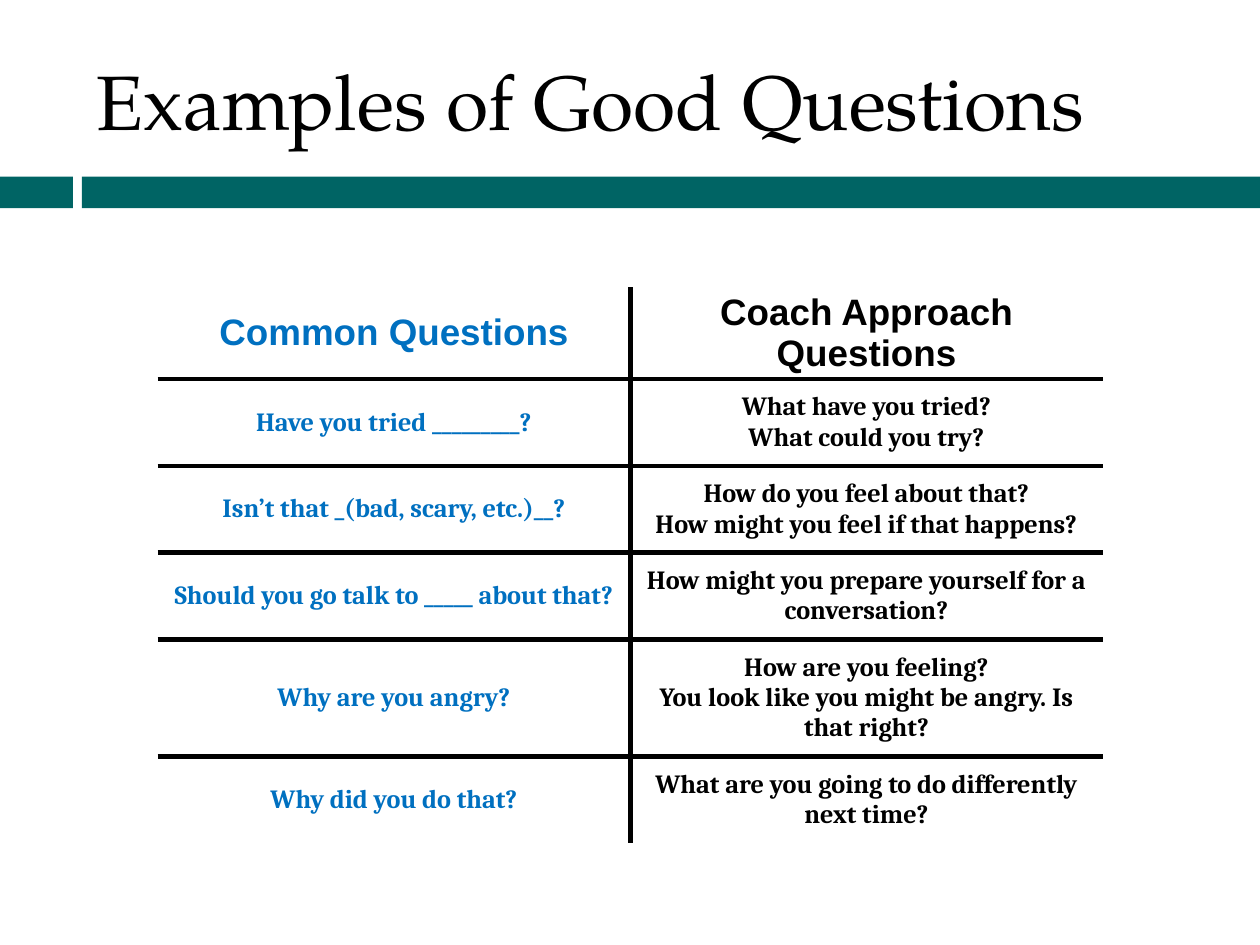
import pptx
import pptx.dml.color
import pptx.enum.shapes
import pptx.enum.text
import pptx.oxml
import pptx.oxml.ns
import pptx.util
from pptx.util import Cm

TEAL = pptx.dml.color.RGBColor(0x00, 0x64, 0x64)
BLUE = pptx.dml.color.RGBColor(0x00, 0x70, 0xC0)
BLACK = pptx.dml.color.RGBColor(0x00, 0x00, 0x00)
WHITE = pptx.dml.color.RGBColor(0xFF, 0xFF, 0xFF)

QUESTIONS = [
    ("Common Questions", "Coach Approach Questions"),
    ("Have you tried _________?", "What have you tried?\nWhat could you try?"),
    ("Isn’t that _(bad, scary, etc.)__?",
     "How do you feel about that?\nHow might you feel if that happens?"),
    ("Should you go talk to _____ about that?",
     "How might you prepare yourself for a conversation?"),
    ("Why are you angry?",
     "How are you feeling?\nYou look like you might be angry. Is that right?"),
    ("Why did you do that?", "What are you going to do differently next time?"),
]
ROW_HEIGHTS = [Cm(1.52), Cm(1.75), Cm(1.75), Cm(1.75), Cm(2.36), Cm(1.75)]


def add_title(slide, left, top, width, height):
    title = slide.shapes.title
    title.left, title.top, title.width, title.height = left, top, width, height
    frame = title.text_frame
    frame.text = "Examples of Good Questions"
    frame.vertical_anchor = pptx.enum.text.MSO_ANCHOR.MIDDLE
    paragraph = frame.paragraphs[0]
    paragraph.alignment = pptx.enum.text.PP_ALIGN.LEFT
    paragraph.font.name = "TeX Gyre Pagella"
    paragraph.font.size = pptx.util.Pt(44)
    paragraph.font.color.rgb = BLACK


def add_divider(slide, left, top, width, height):
    block_width, gap = Cm(1.47), Cm(0.18)
    bar_offset = block_width + gap
    for offset, bar_width in ((0, block_width), (bar_offset, width - bar_offset)):
        bar = slide.shapes.add_shape(
            pptx.enum.shapes.MSO_SHAPE.RECTANGLE, left + offset, top, bar_width, height)
        bar.shadow.inherit = False
        bar.fill.solid()
        bar.fill.fore_color.rgb = TEAL
        bar.line.fill.background()


def set_borders(cell, visible_sides):
    properties = cell._tc.get_or_add_tcPr()
    for index, side in enumerate("LRTB"):
        if side in visible_sides:
            fill = f'<a:solidFill><a:srgbClr val="{BLACK}"/></a:solidFill>'
        else:
            fill = "<a:noFill/>"
        border = pptx.oxml.parse_xml(
            f'<a:ln{side} {pptx.oxml.ns.nsdecls("a")} w="{pptx.util.Pt(3)}">'
            f"{fill}</a:ln{side}>")
        properties.insert(index, border)


def format_cell(cell, text, is_header, color):
    cell.fill.solid()
    cell.fill.fore_color.rgb = WHITE
    cell.vertical_anchor = pptx.enum.text.MSO_ANCHOR.MIDDLE
    cell.margin_left = cell.margin_right = Cm(0.18)
    cell.margin_top = cell.margin_bottom = Cm(0.1)
    cell.text_frame.text = text
    for paragraph in cell.text_frame.paragraphs:
        paragraph.alignment = pptx.enum.text.PP_ALIGN.CENTER
        paragraph.font.name = "Arial" if is_header else "Cambria"
        paragraph.font.size = pptx.util.Pt(21 if is_header else 15)
        paragraph.font.bold = True
        paragraph.font.color.rgb = color


def add_question_table(slide, left, top, width):
    table = slide.shapes.add_table(
        len(QUESTIONS), 2, left, top, width, sum(ROW_HEIGHTS)).table
    table.horz_banding = False
    for row, height in zip(table.rows, ROW_HEIGHTS):
        row.height = height
    last_row = len(QUESTIONS) - 1
    for row_index, texts in enumerate(QUESTIONS):
        row_sides = ("T" if row_index > 0 else "") + ("B" if row_index < last_row else "")
        for column_index, (text, color, side) in enumerate(zip(texts, (BLUE, BLACK), "RL")):
            cell = table.cell(row_index, column_index)
            format_cell(cell, text, row_index == 0, color)
            set_borders(cell, row_sides + side)


def main():
    presentation = pptx.Presentation()
    presentation.slide_width, presentation.slide_height = Cm(25.4), Cm(19.05)
    slide = presentation.slides.add_slide(presentation.slide_layouts[5])
    add_divider(slide, Cm(0), Cm(3.56), presentation.slide_width, Cm(0.64))
    add_title(slide, Cm(1.7), Cm(0.64), Cm(22.66), Cm(2.74))
    add_question_table(slide, Cm(3.18), Cm(5.79), Cm(19.05))
    presentation.save("out.pptx")


if __name__ == "__main__":
    main()
